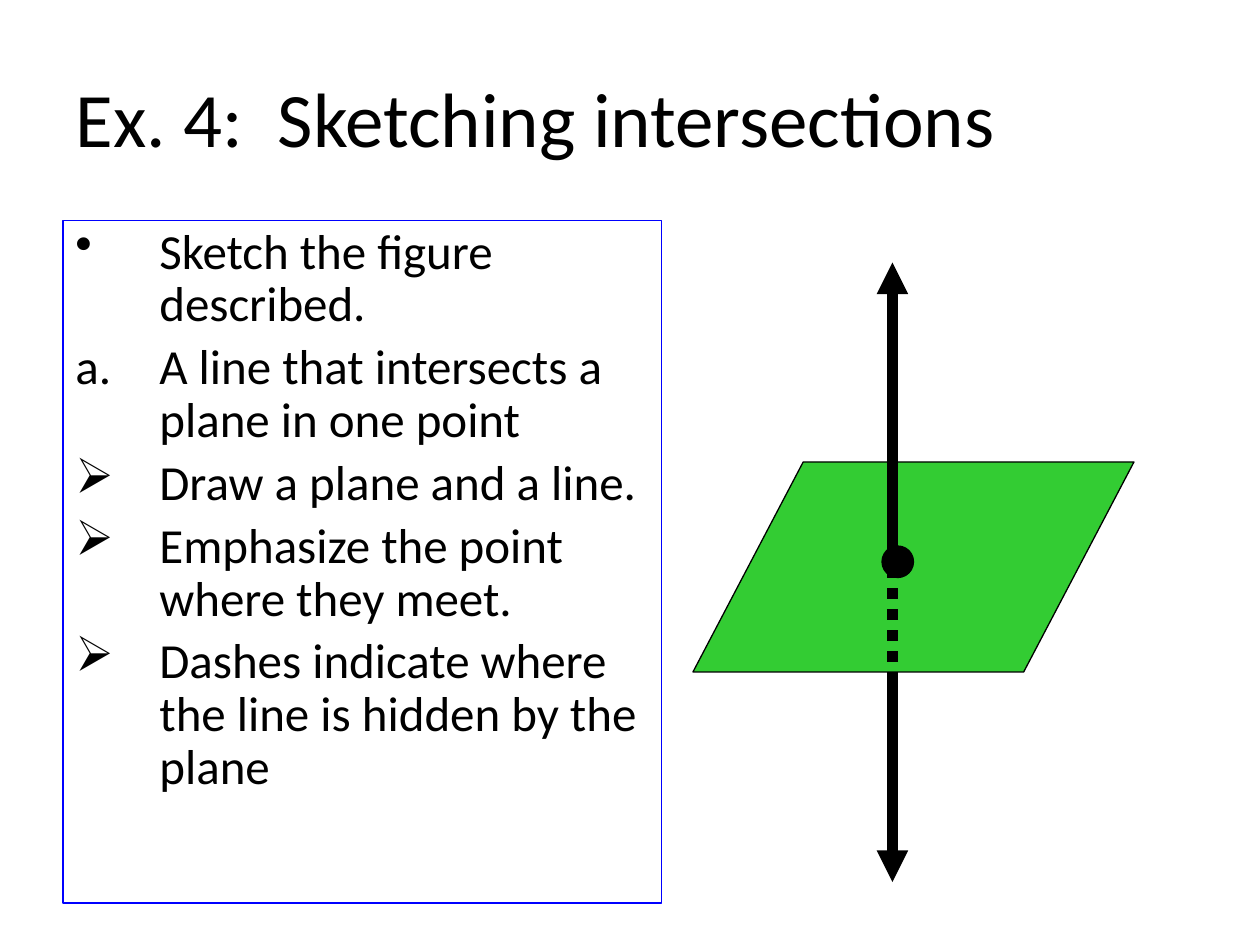
from pptx import Presentation
from pptx.dml.color import RGBColor
from pptx.enum.dml import MSO_LINE_DASH_STYLE as DASH
from pptx.enum.shapes import MSO_CONNECTOR as CONNECTOR, MSO_SHAPE as SHAPE
from pptx.enum.text import MSO_ANCHOR as ANCHOR, MSO_AUTO_SIZE as AUTO_SIZE, PP_ALIGN as ALIGN
from pptx.oxml.ns import qn
from pptx.util import Pt
from lxml.etree import SubElement

PX = 9525
FONT = "Calibri"
BLACK = RGBColor(0x00, 0x00, 0x00)
BLUE = RGBColor(0x00, 0x00, 0xFF)
GREEN = RGBColor(0x33, 0xCC, 0x33)
HANGING = 64

STEPS = [
    ("buChar", "char", "•", "Sketch the figure described."),
    ("buAutoNum", "type", "alphaLcPeriod", "A line that intersects a plane in one point"),
    ("buChar", "char", "➢", "Draw a plane and a line."),
    ("buChar", "char", "➢", "Emphasize the point where they meet."),
    ("buChar", "char", "➢", "Dashes indicate where the line is hidden by the plane"),
]


def px(*lengths):
    return [length * PX for length in lengths]


def add_text(paragraph, text, size):
    run = paragraph.add_run()
    run.text = text
    run.font.name = FONT
    run.font.size = Pt(size)
    run.font.color.rgb = BLACK


def place_title(slide, left, top, width, height):
    title = slide.shapes.title
    title.left, title.top, title.width, title.height = px(left, top, width, height)
    frame = title.text_frame
    frame.word_wrap = True
    frame.auto_size = AUTO_SIZE.NONE
    frame.vertical_anchor = ANCHOR.MIDDLE
    paragraph = frame.paragraphs[0]
    paragraph.alignment = ALIGN.LEFT
    add_text(paragraph, "Ex. 4:  Sketching intersections", 44)


def add_steps(slide, left, top, width, height):
    box = slide.shapes.add_textbox(*px(left, top, width, height))
    box.line.color.rgb = BLUE
    box.line.width = Pt(0.75)
    frame = box.text_frame
    frame.word_wrap = True
    for index, (tag, attribute, value, text) in enumerate(STEPS):
        paragraph = frame.add_paragraph() if index else frame.paragraphs[0]
        paragraph.line_spacing = 0.9
        paragraph.space_before = Pt(5.6)
        add_text(paragraph, text, 28)
        properties = paragraph._p.get_or_add_pPr()
        properties.set("marL", str(HANGING * PX))
        properties.set("indent", str(-HANGING * PX))
        SubElement(properties, qn("a:" + tag)).set(attribute, value)


def add_figure(slide, kind, fill, left, top, width, height):
    shape = slide.shapes.add_shape(kind, *px(left, top, width, height))
    shape.shadow.inherit = False
    shape.fill.solid()
    shape.fill.fore_color.rgb = fill
    shape.line.color.rgb = BLACK
    shape.line.width = Pt(0.75)
    return shape


def add_ray(slide, x, start, end, dash=None, arrow=False):
    ray = slide.shapes.add_connector(CONNECTOR.STRAIGHT, *px(x, start, x, end))
    ray.line.color.rgb = BLACK
    ray.line.width = Pt(6)
    if dash:
        ray.line.dash_style = dash
    if arrow:
        SubElement(ray.line._get_or_add_ln(), qn("a:tailEnd")).set("type", "triangle")
    SubElement(ray._element.spPr, qn("a:effectLst"))


def add_intersection(slide, left, top, width, height):
    axis = left + 152
    plane_top, plane_height = top + 152, 160
    plane = add_figure(slide, SHAPE.PARALLELOGRAM, GREEN, left, plane_top, width, plane_height)
    plane.adjustments[0] = 0.525
    add_figure(slide, SHAPE.OVAL, BLACK, left + 144, top + 216, 24, 24)
    add_ray(slide, axis, top + 224, top, arrow=True)
    add_ray(slide, axis, top + 232, top + height, dash=DASH.ROUND_DOT, arrow=True)
    add_ray(slide, axis, plane_top + plane_height, top + height - 24)


def main():
    presentation = Presentation()
    presentation.slide_width, presentation.slide_height = px(960, 720)
    slide = presentation.slides.add_slide(presentation.slide_layouts[5])
    place_title(slide, 48, 29, 864, 120)
    add_steps(slide, 48, 168, 456, 520)
    add_intersection(slide, 528, 200, 336, 472)
    presentation.save("out.pptx")


if __name__ == "__main__":
    main()
